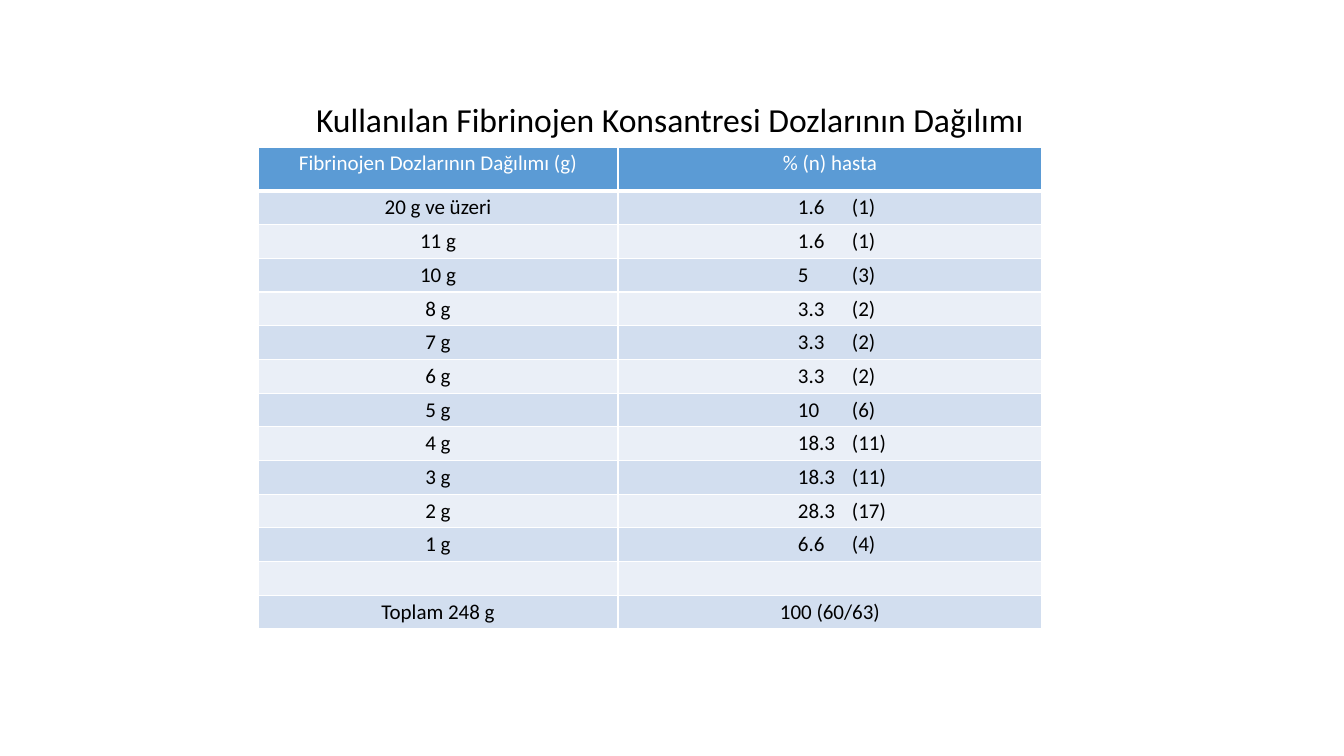
from typing import NamedTuple

from lxml import etree
from pptx import Presentation
from pptx.dml.color import RGBColor
from pptx.enum.text import MSO_ANCHOR, MSO_AUTO_SIZE, PP_ALIGN
from pptx.oxml.ns import qn
from pptx.util import Emu, Pt

LEFT, CENTER = PP_ALIGN.LEFT, PP_ALIGN.CENTER
TOP, MIDDLE = MSO_ANCHOR.TOP, MSO_ANCHOR.MIDDLE
NO_FIT = MSO_AUTO_SIZE.NONE

SCALE = 914400 / 100.8
FONT = "Calibri"
BLACK, WHITE, BLUE = "000000", "FFFFFF", "5B9BD5"
BANDS = ("D2DEEF", "EAEFF7")
COLS = (360, 424)
HEAD_H, ROW_H = 44, 33
PAD_X, PAD_Y = 7, 4
SHARE_X, COUNT_TAB = 180, 54
CELL_PT, TITLE_PT = 15, 24


class Row(NamedTuple):
    dose: str
    share: str
    count: str = ""


HEAD = Row("Fibrinojen Dozlarının Dağılımı (g)", "% (n) hasta")
ROWS = (
    Row("20 g ve üzeri", "1.6", "(1)"),
    Row("11 g", "1.6", "(1)"),
    Row("10 g", "5", "(3)"),
    Row("8 g", "3.3", "(2)"),
    Row("7 g", "3.3", "(2)"),
    Row("6 g", "3.3", "(2)"),
    Row("5 g", "10", "(6)"),
    Row("4 g", "18.3", "(11)"),
    Row("3 g", "18.3", "(11)"),
    Row("2 g", "28.3", "(17)"),
    Row("1 g", "6.6", "(4)"),
    Row("", ""),
    Row("Toplam 248 g", "100 (60/63)"),
)


def px(n: int) -> Emu:
    return Emu(round(n * SCALE))


def rgb(color: str) -> RGBColor:
    return RGBColor.from_string(color)


def style(para, size: int, color: str, align) -> None:
    para.alignment = align
    for run in para.runs:
        font = run.font
        font.name, font.size, font.bold = FONT, Pt(size), False
        font.color.rgb = rgb(color)


def add_tab(para, pos: int) -> None:
    tabs = etree.SubElement(para._p.get_or_add_pPr(), qn("a:tabLst"))
    etree.SubElement(tabs, qn("a:tab"), pos=str(px(pos)), algn="l")


def frame(cell, base: int) -> None:
    """Rule the cell in white, with its lower edge base points wide."""
    props = cell._tc.get_or_add_tcPr()
    for side, width in (("L", 1), ("R", 1), ("T", 1), ("B", base)):
        line = etree.SubElement(props, qn(f"a:ln{side}"), w=str(Pt(width)))
        fill = etree.SubElement(line, qn("a:solidFill"))
        etree.SubElement(fill, qn("a:srgbClr"), val=WHITE)


def fill_cell(cell, text: str, color: str, fill: str, base: int = 1) -> None:
    frame(cell, base)
    cell.fill.solid()
    cell.fill.fore_color.rgb = rgb(fill)
    cell.vertical_anchor = TOP
    cell.margin_left = cell.margin_right = px(PAD_X)
    cell.margin_top = cell.margin_bottom = px(PAD_Y)
    para = cell.text_frame.paragraphs[0]
    para.text = text
    style(para, CELL_PT, color, CENTER)
    if not text:
        # An empty cell takes its line height from the end mark.
        etree.SubElement(para._p, qn("a:endParaRPr"), sz=str(CELL_PT * 100))
    if "\t" in text:
        para.alignment = LEFT
        cell.margin_left = px(SHARE_X)
        add_tab(para, COUNT_TAB)


def add_title(slide) -> None:
    title = slide.shapes.title
    title.left, title.top = px(242), px(95)
    title.width, title.height = px(869), px(53)
    body = title.text_frame
    body.text = "Kullanılan Fibrinojen Konsantresi Dozlarının Dağılımı"
    body.word_wrap, body.auto_size = True, NO_FIT
    body.vertical_anchor = MIDDLE
    body.margin_left = px(74)
    para = body.paragraphs[0]
    para.line_spacing = 0.9
    style(para, TITLE_PT, BLACK, LEFT)


def add_doses(slide) -> None:
    high = HEAD_H + ROW_H * len(ROWS)
    table = slide.shapes.add_table(
        len(ROWS) + 1, len(COLS), px(258), px(147), px(sum(COLS)), px(high)
    ).table
    for col, width in zip(table.columns, COLS):
        col.width = px(width)
    table.rows[0].height = px(HEAD_H)
    for col, text in enumerate((HEAD.dose, HEAD.share)):
        fill_cell(table.cell(0, col), text, WHITE, BLUE, base=3)
    for i, row in enumerate(ROWS):
        table.rows[i + 1].height = px(ROW_H)
        share = f"{row.share}\t{row.count}" if row.count else row.share
        for col, text in enumerate((row.dose, share)):
            fill_cell(table.cell(i + 1, col), text, BLACK, BANDS[i % 2])


def main() -> None:
    deck = Presentation()
    deck.slide_width, deck.slide_height = px(1344), px(756)
    slide = deck.slides.add_slide(deck.slide_layouts[5])
    add_title(slide)
    add_doses(slide)
    deck.save("out.pptx")


if __name__ == "__main__":
    main()
